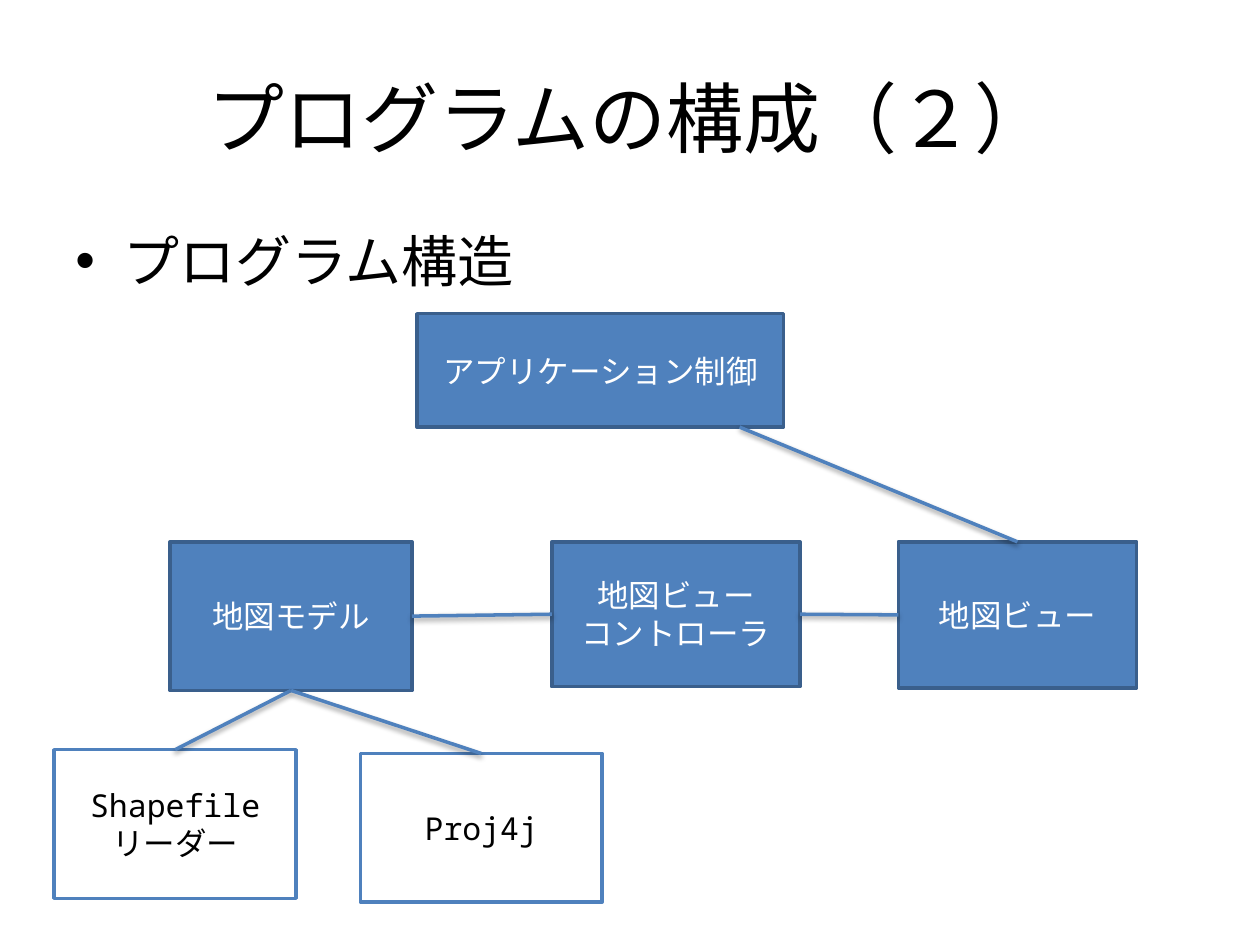
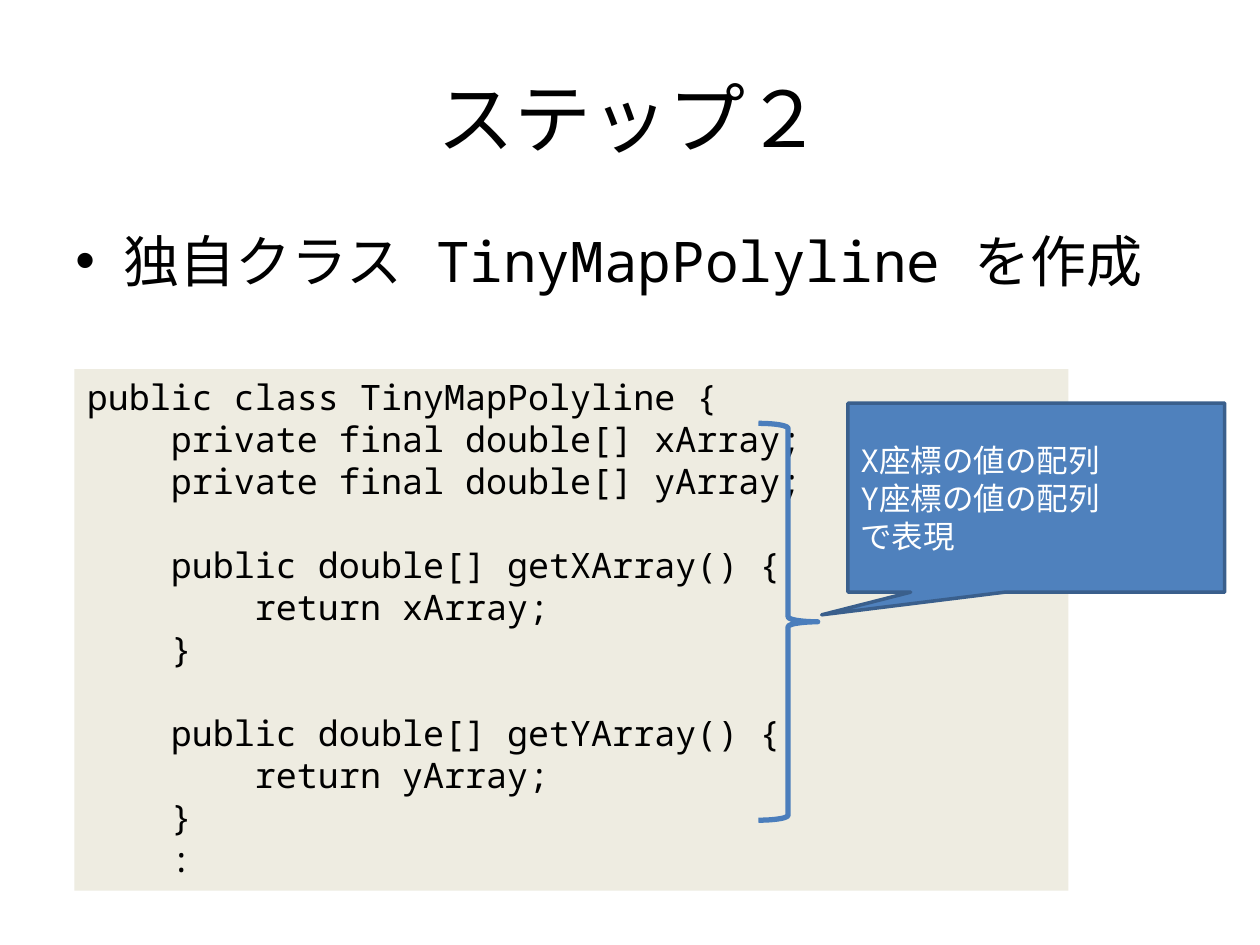
import lxml.etree
import pptx
import pptx.dml.color
import pptx.enum.shapes
import pptx.enum.text
import pptx.oxml.ns
import pptx.util

Inches, Pt = pptx.util.Inches, pptx.util.Pt
SHAPES = pptx.enum.shapes.MSO_SHAPE
ALIGN = pptx.enum.text.PP_ALIGN
ANCHOR = pptx.enum.text.MSO_ANCHOR

FONT = "Noto Sans Mono"
BLACK, WHITE = "000000", "FFFFFF"
BLUE, DARK_BLUE, BRACE_BLUE, CODE_BEIGE = "4F81BD", "3A5F8C", "4B7EBC", "EEECE1"
TITLE_BOX = (0.5, 0.3, 9, 1.25)
TOP, LEFT, BOTTOM, RIGHT = range(4)
CODE_LINE = 24  # line pitch of the listing, in points

# Each method is a block, set apart by one line
CODE_BLOCKS = [
    ["public class TinyMapPolyline {",
     "    private final double[] xArray;",
     "    private final double[] yArray;"],
    ["    public double[] getXArray() {",
     "        return xArray;",
     "    }"],
    ["    public double[] getYArray() {",
     "        return yArray;",
     "    }",
     "    :"],
]


def rgb(value):
    return pptx.dml.color.RGBColor.from_string(value)


def inches(box):
    return [Inches(length) for length in box]


def add_xml(parent, tag, attributes):
    child = lxml.etree.SubElement(parent, pptx.oxml.ns.qn(tag))
    for name, value in attributes.items():
        child.set(name, str(value))
    return child


def write(frame, lines, size, color, align=ALIGN.CENTER, anchor=ANCHOR.MIDDLE, bullet=None):
    settings = {"word_wrap": True, "vertical_anchor": anchor}
    for name, value in settings.items():
        setattr(frame, name, value)
    for index, line in enumerate(lines):
        paragraph = frame.paragraphs[0] if index == 0 else frame.add_paragraph()
        paragraph.alignment = align
        if bullet:
            properties = paragraph._p.get_or_add_pPr()
            properties.set("marL", str(Inches(0.38)))
            properties.set("indent", str(Inches(-0.38)))
            add_xml(properties, "a:buFont", {"typeface": "Arial"})
            add_xml(properties, "a:buChar", {"char": bullet})
        run = paragraph.add_run()
        run.text = line
        for name, value in {"name": FONT, "size": Pt(size)}.items():
            setattr(run.font, name, value)
        run.font.color.rgb = rgb(color)
        add_xml(run._r.get_or_add_rPr(), "a:ea", {"typeface": FONT})


def add_text(slide, box, lines, size, **style):
    text_box = slide.shapes.add_textbox(*inches(box))
    write(text_box.text_frame, lines, size, BLACK, **style)


def add_panel(slide, kind, box, fill=None, line=None, width=2):
    panel = slide.shapes.add_shape(kind, *inches(box))
    panel.shadow.inherit = False
    if fill:
        panel.fill.solid()
        panel.fill.fore_color.rgb = rgb(fill)
    else:
        panel.fill.background()
    if line:
        panel.line.color.rgb = rgb(line)
        panel.line.width = Pt(width)
    else:
        panel.line.fill.background()
    return panel


def add_heading(slide, title, topic, topic_height):
    add_text(slide, TITLE_BOX, [title], 44)
    add_text(slide, (0.5, 1.75, 9, topic_height), [topic], 32,
             align=ALIGN.LEFT, anchor=ANCHOR.TOP, bullet="•")


def add_link(slide, start, end, start_side, end_side):
    """Join two boxes; start may also be a free point with no side."""
    link = slide.shapes.add_connector(pptx.enum.shapes.MSO_CONNECTOR.STRAIGHT, 0, 0, 0, 0)
    if start_side is None:
        link.begin_x, link.begin_y = inches(start)
    else:
        link.begin_connect(start, start_side)
    link.end_connect(end, end_side)
    link.line.color.rgb = rgb(BLUE)
    link.line.width = Pt(2)
    # Soft shadow straight below
    effects = add_xml(link._element.spPr, "a:effectLst", {})
    shadow = add_xml(effects, "a:outerShdw", {
        "blurRad": Pt(3.1), "dist": Pt(1.6), "dir": 90 * 60000, "rotWithShape": 0})
    shade = add_xml(shadow, "a:srgbClr", {"val": BLACK})
    add_xml(shade, "a:alpha", {"val": 38000})


def add_structure(slide, left, top):
    """Application parts in blue, libraries in white, joined by lines."""
    own = {"fill": BLUE, "line": DARK_BLUE}
    library = {"fill": WHITE, "line": BLUE}
    parts = {
        "view": (6.7, 1.81, 1.89, 1.16, ["地図ビュー"], own),
        "controller": (3.95, 1.81, 1.97, 1.15, ["地図ビュー", "コントローラ"], own),
        "model": (0.92, 1.81, 1.92, 1.18, ["地図モデル"], own),
        "application": (2.88, 0, 2.91, 0.9, ["アプリケーション制御"], own),
        "reader": (0, 3.46, 1.92, 1.18, ["Shapefile", "リーダー"], library),
        "projection": (2.43, 3.49, 1.92, 1.18, ["Proj4j"], library),
    }
    boxes = {}
    for name, (x, y, width, height, lines, style) in parts.items():
        box = add_panel(slide, SHAPES.RECTANGLE, (left + x, top + y, width, height), **style)
        write(box.text_frame, lines, 18, WHITE if style is own else BLACK)
        boxes[name] = box
    add_link(slide, (left + 5.44, top + 0.9), boxes["view"], None, TOP)
    for start, end, start_side, end_side in [
            ("controller", "model", LEFT, RIGHT),
            ("controller", "view", RIGHT, LEFT),
            ("model", "reader", BOTTOM, TOP),
            ("model", "projection", BOTTOM, TOP)]:
        add_link(slide, boxes[start], boxes[end], start_side, end_side)


def add_listing(slide, left, top, width, height):
    """Code panel with a brace and a callout at its right."""
    panel = add_panel(slide, SHAPES.RECTANGLE, (left, top, width, height), CODE_BEIGE)
    frame = panel.text_frame
    write(frame, sum(CODE_BLOCKS, []), 20, BLACK, ALIGN.LEFT, ANCHOR.TOP)
    first_line = 0
    for block in CODE_BLOCKS[:-1]:
        first_line += len(block)
        frame.paragraphs[first_line].space_before = Pt(CODE_LINE)

    callout = add_panel(slide, SHAPES.RECTANGULAR_CALLOUT,
                        (left + 6.14, top + 0.27, 2.99, 1.5), BLUE, DARK_BLUE)
    callout.adjustments[0], callout.adjustments[1] = -0.57, 0.62
    write(callout.text_frame, ["X座標の値の配列", "Y座標の値の配列", "で表現"],
          18, WHITE, ALIGN.LEFT)
    add_panel(slide, SHAPES.RIGHT_BRACE, (left + 5.43, top + 0.43, 0.47, 3.15),
              line=BRACE_BLUE, width=3)


def main():
    deck = pptx.Presentation()
    deck.slide_width, deck.slide_height = Inches(10), Inches(7.5)
    blank = deck.slide_layouts[6]

    structure = deck.slides.add_slide(blank)
    add_heading(structure, "プログラムの構成（２）", "プログラム構造", 4.95)
    add_structure(structure, 0.43, 2.49)

    step = deck.slides.add_slide(blank)
    add_heading(step, "ステップ２", "独自クラス TinyMapPolyline を作成", 0.9)
    add_listing(step, 0.59, 2.93, 7.89, 4.14)

    deck.save("out.pptx")


if __name__ == "__main__":
    main()
